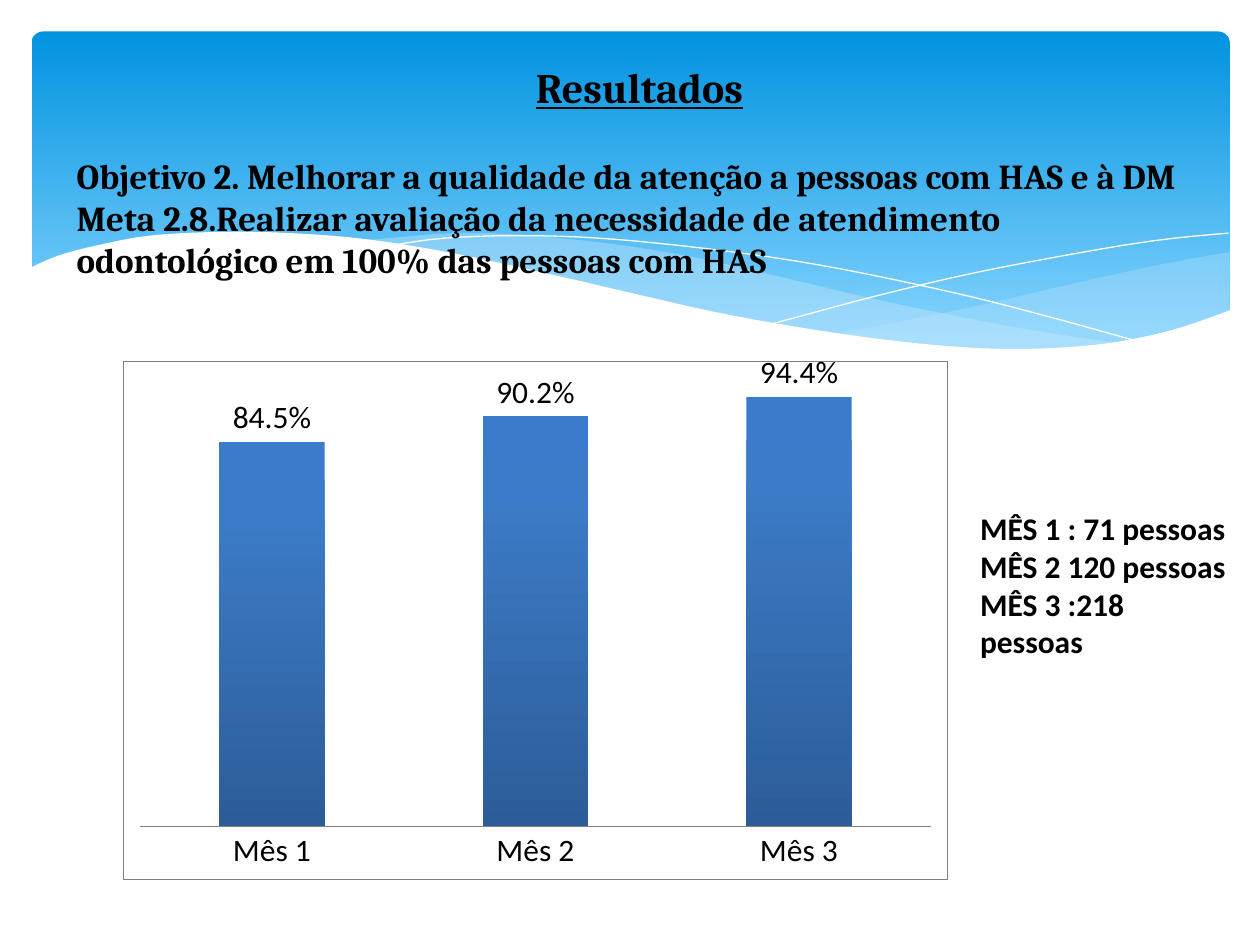
from copy import deepcopy

from lxml import etree
from pptx import Presentation
from pptx.chart.data import CategoryChartData
from pptx.dml.color import RGBColor
from pptx.enum.chart import XL_CHART_TYPE, XL_LABEL_POSITION, XL_TICK_MARK
from pptx.enum.shapes import MSO_SHAPE
from pptx.enum.text import PP_ALIGN
from pptx.oxml import parse_xml
from pptx.oxml.ns import nsdecls, qn
from pptx.util import Inches, Pt

COLUMNS = XL_CHART_TYPE.COLUMN_CLUSTERED
OUTSIDE = XL_LABEL_POSITION.OUTSIDE_END
NO_TICK = XL_TICK_MARK.NONE
ROUNDED = MSO_SHAPE.ROUNDED_RECTANGLE
LEFT, CENTER = PP_ALIGN.LEFT, PP_ALIGN.CENTER

BLACK = RGBColor(0x00, 0x00, 0x00)
WHITE = RGBColor(0xFF, 0xFF, 0xFF)
GRAY = RGBColor(0x80, 0x80, 0x80)
PALE_BLUE = RGBColor(0xC6, 0xE7, 0xFC)
BANNER_STOPS = [(0, RGBColor(0x02, 0x93, 0xE0)), (0.9, RGBColor(0x83, 0xD3, 0xFE))]
BAR_STOPS = [(0, RGBColor(0x3A, 0x7C, 0xCB)), (0.2, RGBColor(0x3C, 0x7B, 0xC7)),
             (1, RGBColor(0x2C, 0x5D, 0x98))]

# Content
TITLE = "Resultados"
GOALS = ["Objetivo 2. Melhorar a qualidade da atenção a pessoas com HAS e à DM",
         "Meta 2.8.Realizar avaliação da necessidade de atendimento "
         "odontológico em 100% das pessoas com HAS"]
COUNTS = ["MÊS 1 : 71 pessoas", "MÊS 2 120 pessoas", "MÊS 3 :218 pessoas"]
MONTHS = ["Mês 1", "Mês 2", "Mês 3"]
SHARES = [0.845, 0.902, 0.944]

# Waves: each edge is a list of points (inches) joined by a smooth curve;
# "alpha" marks a filled wave (opacity in percent), no "alpha" a thin line
WAVES = [
    {"alpha": 29, "edges": [
        [(9.76, 2), (9.21, 2.1), (8.61, 2.23), (7.79, 2.42), (7.06, 2.57), (6.61, 2.65)],
        [(6.61, 2.65), (7.19, 2.72), (7.69, 2.77), (8.14, 2.78), (8.63, 2.75),
         (9.13, 2.67), (9.49, 2.57), (9.76, 2.47)]]},
    {"alpha": 40, "edges": [
        [(8.93, 2.73), (8.07, 2.6), (7.06, 2.4), (6.29, 2.22), (5.55, 2.05), (4.89, 1.94),
         (4.2, 1.87), (3.61, 1.85), (2.86, 1.91)],
        [(2.86, 1.91), (3.62, 2.03), (4.49, 2.22), (5.3, 2.4), (6.18, 2.58), (6.95, 2.7),
         (7.61, 2.77), (8.18, 2.78), (8.93, 2.73)]]},
    {"edges": [[(3.09, 1.95), (3.53, 1.89), (4.16, 1.87), (4.89, 1.9), (5.82, 2),
                (6.65, 2.13), (7.6, 2.33), (8.31, 2.51), (9.07, 2.72)]]},
    {"edges": [[(6.13, 2.57), (6.95, 2.35), (7.76, 2.16), (8.66, 1.99), (9.24, 1.9),
                (9.75, 1.85)]]},
    {"alpha": 100, "edges": [
        [(9.77, 2.46), (9.3, 2.62), (8.75, 2.73), (8.09, 2.77), (7.44, 2.74), (6.68, 2.65),
         (5.79, 2.5), (5.03, 2.33), (4.47, 2.2), (3.65, 2.02), (2.92, 1.9), (2.3, 1.85),
         (1.77, 1.84), (1.19, 1.87), (0.76, 1.95), (0.46, 2.03), (0.23, 2.13)],
        [(0.23, 3.29)], [(9.77, 3.29)]]},
]


def smooth(points, steps=5):
    """Catmull-Rom curve through the points."""
    padded = [points[0], *points, points[-1]]
    curve = [points[0]]
    for a, b, c, d in zip(padded, padded[1:], padded[2:], padded[3:]):
        for step in range(1, steps + 1):
            t = step / steps
            curve.append(tuple(
                0.5 * (2 * q + (r - p) * t + (2 * p - 5 * q + 4 * r - s) * t ** 2
                       + (3 * q - p - 3 * r + s) * t ** 3)
                for p, q, r, s in zip(a, b, c, d)))
    return curve


def fill_gradient(fill, element, stops):
    """Top-to-bottom gradient."""
    fill.gradient()
    fill.gradient_angle = 270
    stop_list = element.xpath(".//a:gsLst")[0]
    for _ in stops[2:]:
        stop_list.append(deepcopy(stop_list[0]))
    for stop, (position, color) in zip(fill.gradient_stops, stops):
        stop.position = position
        stop.color.rgb = color


def add_wave(slide, edges, alpha=None):
    # The builder rounds to whole units, so points are given in EMU
    points = [(Inches(x), Inches(y)) for edge in edges for x, y in smooth(edge)]
    builder = slide.shapes.build_freeform(*points[0])
    builder.add_line_segments(points[1:], close=alpha is not None)
    wave = builder.convert_to_shape()
    wave.shadow.inherit = False
    if alpha is None:
        wave.fill.background()
        wave.line.color.rgb = WHITE
        wave.line.width = Pt(0)
        return
    wave.line.fill.background()
    wave.fill.solid()
    wave.fill.fore_color.rgb = WHITE if alpha == 100 else PALE_BLUE
    if alpha < 100:
        color = wave._element.xpath("./p:spPr/a:solidFill/a:srgbClr")[0]
        etree.SubElement(color, qn("a:alpha")).set("val", str(alpha * 1000))


def add_para(frame, text, size, font, align=LEFT, underline=False, after=0):
    para = frame.paragraphs[0]
    if para.runs:
        para = frame.add_paragraph()
    para.alignment = align
    para.space_after = Pt(after)
    span = para.add_run()
    span.text = text
    span.font.name, span.font.size, span.font.bold = font, Pt(size), True
    span.font.underline = underline
    span.font.color.rgb = BLACK


def add_frame(slide, *place):
    frame = slide.shapes.add_textbox(*map(Inches, place)).text_frame
    frame.word_wrap = True
    return frame


def style_font(font, size):
    font.name, font.size = "Calibri", Pt(size)
    font.color.rgb = BLACK


def area_format(border):
    line = (f'<a:ln w="3175"><a:solidFill><a:srgbClr val="{GRAY}"/></a:solidFill></a:ln>'
            if border else '<a:ln><a:noFill/></a:ln>')
    return parse_xml(f'<c:spPr {nsdecls("c", "a")}><a:solidFill><a:srgbClr val="{WHITE}"/>'
                     f'</a:solidFill>{line}</c:spPr>')


def add_share_chart(slide, *place):
    data = CategoryChartData(number_format="0.0%")
    data.categories = MONTHS
    data.add_series("Series 1", SHARES)
    chart = slide.shapes.add_chart(COLUMNS, *map(Inches, place), data).chart
    chart.has_title = chart.has_legend = False
    style_font(chart.font, 10)

    # Axes
    months, shares = chart.category_axis, chart.value_axis
    months.major_tick_mark = NO_TICK
    months.format.line.color.rgb = GRAY
    months.format.line.width = Pt(0.25)
    style_font(months.tick_labels.font, 18)
    shares.minimum_scale, shares.maximum_scale, shares.major_unit = 0, 1, 0.1
    shares.has_major_gridlines = False
    shares.visible = False

    # Bars and labels
    plot = chart.plots[0]
    plot.gap_width, plot.overlap, plot.vary_by_categories = 150, -25, False
    bars = plot.series[0]
    fill_gradient(bars.format.fill, bars._element, BAR_STOPS)
    labels = bars.data_labels
    labels.show_value = True
    labels.number_format, labels.number_format_is_linked = "0.0%", False
    labels.position = OUTSIDE
    style_font(labels.font, 18)

    # Backgrounds
    space = chart._chartSpace
    space.xpath("./c:txPr")[0].addprevious(area_format(border=True))
    space.xpath(".//c:plotArea")[0].append(area_format(border=False))


def main():
    deck = Presentation()
    deck.slide_width, deck.slide_height = Inches(10), Inches(7.5)
    page = deck.slides.add_slide(deck.slide_layouts[6])

    # Banner with waves
    banner = page.shapes.add_shape(ROUNDED, *map(Inches, (0.25, 0.25, 9.51, 2.7)))
    banner.adjustments[0] = 0.034
    banner.shadow.inherit = False
    banner.line.fill.background()
    fill_gradient(banner.fill, banner._element, BANNER_STOPS)
    for wave in WAVES:
        add_wave(page, **wave)

    # Heading and monthly counts
    heading = add_frame(page, 0.51, 0.44, 9.13, 1.85)
    add_para(heading, TITLE, 24, "Cambria", align=CENTER, underline=True, after=24)
    for goal in GOALS:
        add_para(heading, goal, 20, "Cambria")
    counts = add_frame(page, 7.68, 3.99, 2.2, 1.01)
    for count in COUNTS:
        add_para(counts, count, 18, "Calibri")

    add_share_chart(page, 0.98, 2.81, 6.54, 4.17)
    deck.save("out.pptx")


if __name__ == "__main__":
    main()
